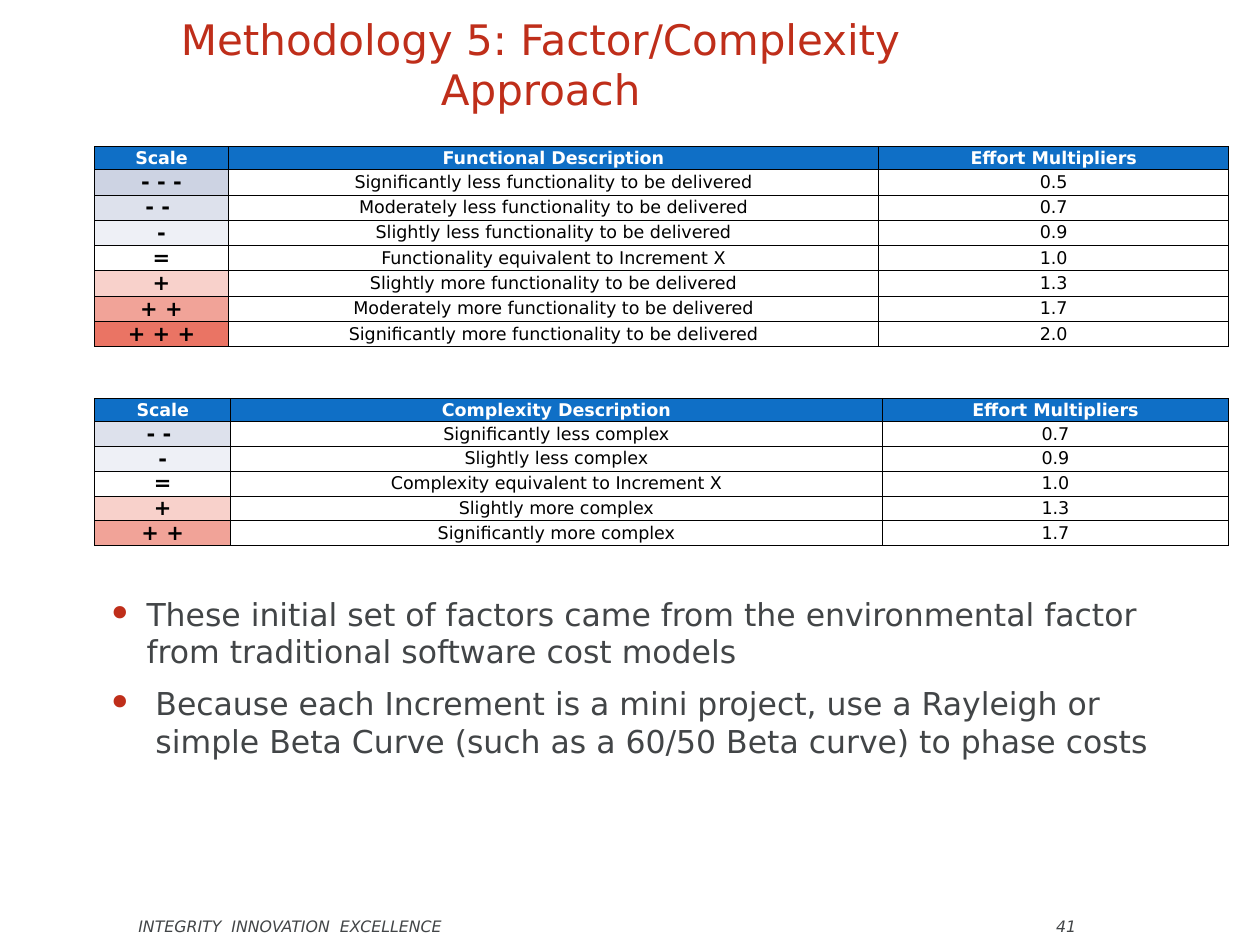
from pptx import Presentation
from pptx.dml.color import RGBColor
from pptx.enum.text import MSO_ANCHOR, MSO_AUTO_SIZE, PP_ALIGN
from pptx.oxml.ns import qn
from pptx.util import Cm, Pt
from lxml.etree import SubElement

FONT = "DejaVu Sans"
RED, GREY, BLUE, BLACK, WHITE = "BF2E1A", "424547", "0F6FC6", "000000", "FFFFFF"

TITLE = "Methodology 5: Factor/Complexity Approach"
FOOTER = "INTEGRITY  INNOVATION  EXCELLENCE"
PAGE = "41"

SCALE_FILLS = {
    "- - -": "CDD3E3", "- - ": "DDE1EC", "-": "EEF0F6", "=": None,
    "+": "F8D1CB", "+ +": "F1A398", "+ + +": "EA7464",
}

# top, column widths and body row height are in centimetres
TABLES = [
    {
        "top": 2.96, "columns": (2.69, 13.11, 7.06), "row_height": 0.51,
        "header": ("Scale", "Functional Description", "Effort Multipliers"),
        "rows": [
            ("- - -", "Significantly less functionality to be delivered", "0.5"),
            ("- - ", "Moderately less functionality to be delivered", "0.7"),
            ("-", "Slightly less functionality to be delivered", "0.9"),
            ("=", "Functionality equivalent to Increment X", "1.0"),
            ("+", "Slightly more functionality to be delivered", "1.3"),
            ("+ +", "Moderately more functionality to be delivered", "1.7"),
            ("+ + +", "Significantly more functionality to be delivered", "2.0"),
        ],
    },
    {
        "top": 8.04, "columns": (2.74, 13.13, 6.99), "row_height": 0.5,
        "header": ("Scale", "Complexity Description", "Effort Multipliers"),
        "rows": [
            ("- - ", "Significantly less complex", "0.7"),
            ("-", "Slightly less complex", "0.9"),
            ("=", "Complexity equivalent to Increment X", "1.0"),
            ("+", "Slightly more complex", "1.3"),
            ("+ +", "Significantly more complex", "1.7"),
        ],
    },
]
HEADER_HEIGHT = 0.46
LEFT = 1.91

# text, level, indent in centimetres
BULLETS = [
    ("These initial set of factors came from the environmental factor "
     "from traditional software cost models", 1, 0.79),
    ("Because each Increment is a mini project, use a Rayleigh or simple "
     "Beta Curve (such as a 60/50 Beta curve) to phase costs", 2, 0.97),
]


def rgb(color):
    return RGBColor.from_string(color)


def add_run(paragraph, text, size, color, bold=False, italic=False):
    run = paragraph.add_run()
    run.text = text
    run.font.name = FONT
    run.font.size = Pt(size)
    run.font.bold = bold
    run.font.italic = italic
    run.font.color.rgb = rgb(color)


def place(shape, left, top, width, height):
    shape.left, shape.top = Cm(left), Cm(top)
    shape.width, shape.height = Cm(width), Cm(height)
    shape.text_frame.word_wrap = True
    shape.text_frame.auto_size = MSO_AUTO_SIZE.NONE


def add_borders(cell):
    properties = cell._tc.get_or_add_tcPr()
    for side in ("a:lnL", "a:lnR", "a:lnT", "a:lnB"):
        border = SubElement(properties, qn(side), w=str(Pt(0.5)))
        SubElement(SubElement(border, qn("a:solidFill")), qn("a:srgbClr"), val=BLACK)


def fill_cell(cell, text, size, color, bold, fill):
    add_borders(cell)
    if fill:
        cell.fill.solid()
        cell.fill.fore_color.rgb = rgb(fill)
    else:
        cell.fill.background()
    cell.margin_left = cell.margin_right = cell.margin_top = cell.margin_bottom = 0
    cell.vertical_anchor = MSO_ANCHOR.MIDDLE
    paragraph = cell.text_frame.paragraphs[0]
    paragraph.alignment = PP_ALIGN.CENTER
    add_run(paragraph, text, size, color, bold)


def add_scale_table(slide, content):
    columns, rows = content["columns"], content["rows"]
    height = HEADER_HEIGHT + content["row_height"] * len(rows)
    table = slide.shapes.add_table(
        len(rows) + 1, len(columns),
        Cm(LEFT), Cm(content["top"]), Cm(sum(columns)), Cm(height)).table
    table.horz_banding = False
    table.first_row = False
    for column, width in zip(table.columns, columns):
        column.width = Cm(width)
    for row in table.rows:
        row.height = Cm(content["row_height"])
    table.rows[0].height = Cm(HEADER_HEIGHT)

    for c, heading in enumerate(content["header"]):
        fill_cell(table.cell(0, c), heading, 10, WHITE, True, BLUE)
    for r, (scale, description, multiplier) in enumerate(rows, 1):
        fill_cell(table.cell(r, 0), scale, 12, BLACK, True, SCALE_FILLS[scale])
        fill_cell(table.cell(r, 1), description, 10, BLACK, False, None)
        fill_cell(table.cell(r, 2), multiplier, 10, BLACK, False, None)


def add_bullet(paragraph, indent):
    properties = paragraph._p.get_or_add_pPr()
    properties.set("marL", str(Cm(indent)))
    properties.set("indent", str(-Cm(indent)))
    SubElement(SubElement(properties, qn("a:buClr")), qn("a:srgbClr"), val=RED)
    SubElement(properties, qn("a:buSzPct"), val="135000")
    SubElement(properties, qn("a:buFont"), typeface=FONT)
    SubElement(properties, qn("a:buChar"), char="•")


def add_footer(slide):
    footer = slide.shapes.add_textbox(0, 0, 0, 0)
    place(footer, 2.54, 18.24, 22.02, 0.81)
    footer.text_frame.margin_top = Cm(0.25)
    paragraph = footer.text_frame.paragraphs[0]
    tabs = SubElement(paragraph._p.get_or_add_pPr(), qn("a:tabLst"))
    SubElement(tabs, qn("a:tab"), pos=str(Cm(18.5)), algn="l")
    add_run(paragraph, f"{FOOTER}\t{PAGE}", 9, GREY, italic=True)


def main():
    deck = Presentation()
    deck.slide_width, deck.slide_height = Cm(25.4), Cm(19.05)
    slide = deck.slides.add_slide(deck.slide_layouts[1])
    title, body = slide.placeholders

    place(title, LEFT, 0.43, 17.98, 1.7)
    title.text_frame.vertical_anchor = MSO_ANCHOR.MIDDLE
    heading = title.text_frame.paragraphs[0]
    heading.alignment = PP_ALIGN.CENTER
    add_run(heading, TITLE, 24, RED)

    for content in TABLES:
        add_scale_table(slide, content)

    place(body, LEFT, 11.86, 22.66, 6.78)
    for i, (text, level, indent) in enumerate(BULLETS):
        frame = body.text_frame
        paragraph = frame.add_paragraph() if i else frame.paragraphs[0]
        add_bullet(paragraph, indent)
        paragraph.level = level
        paragraph.space_before = Pt(8 if i else 0)
        add_run(paragraph, text, 18, GREY)

    add_footer(slide)
    deck.save("out.pptx")


if __name__ == "__main__":
    main()
